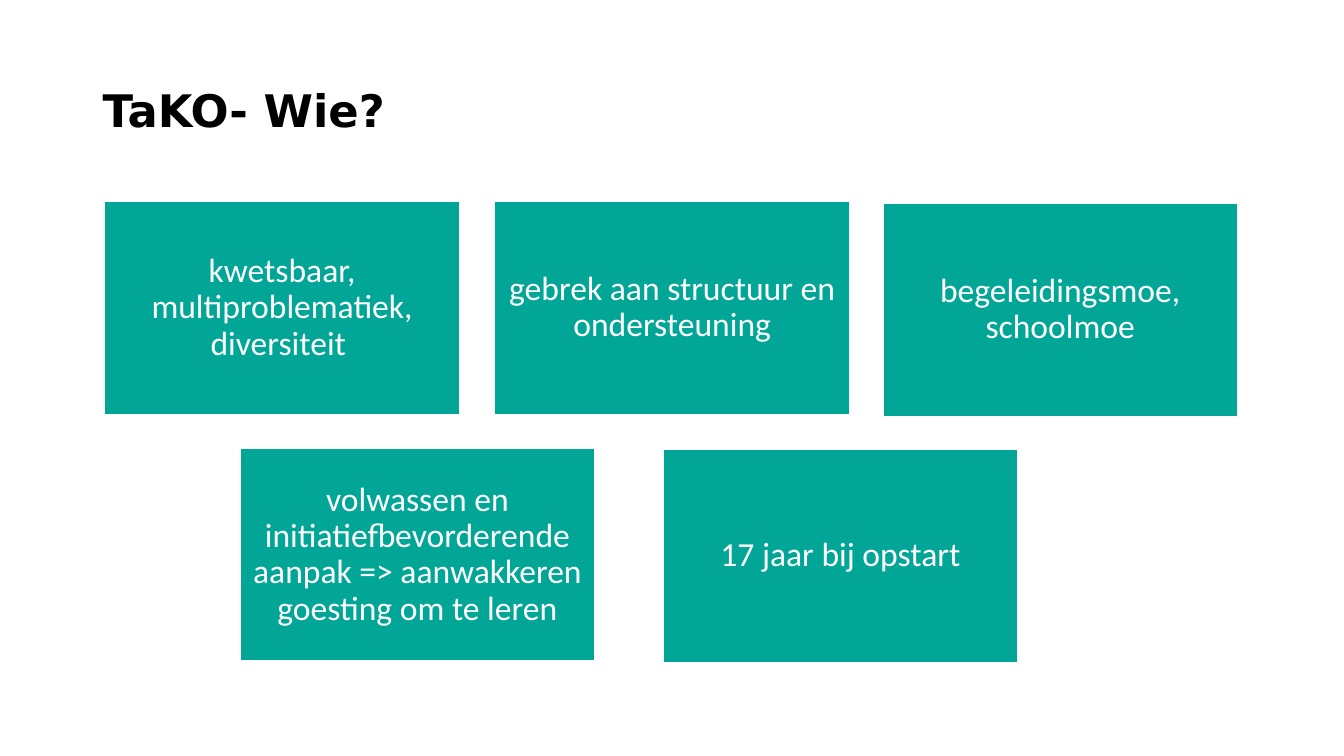
import pptx
import pptx.util
import pptx.dml.color
import pptx.enum.shapes
import pptx.enum.text

Cm = pptx.util.Cm
Pt = pptx.util.Pt
TEAL = pptx.dml.color.RGBColor(0x02, 0xA6, 0x97)
WHITE = pptx.dml.color.RGBColor(0xFF, 0xFF, 0xFF)
BLACK = pptx.dml.color.RGBColor(0x00, 0x00, 0x00)

# Left, top and text of each card, in cm
CARDS = [
    (2.64, 5.08, "kwetsbaar, multiproblematiek, diversiteit "),
    (12.47, 5.08, "gebrek aan structuur en ondersteuning"),
    (22.25, 5.13, "begeleidingsmoe, schoolmoe"),
    (6.05, 11.3, "volwassen en initiatiefbevorderende aanpak => "
                 "aanwakkeren goesting om te leren"),
    (16.71, 11.33, "17 jaar bij opstart"),
]


class Deck:
    """Holds the style and the current slide."""
    head_font, body_font = "DejaVu Sans", "Calibri"
    head_size, body_size = Pt(32), Pt(24)
    wide, high, inset = Cm(8.94), Cm(5.36), Cm(0.25)

    def __init__(self):
        self.file = pptx.Presentation()
        self.file.slide_width = Cm(33.87)
        self.file.slide_height = Cm(19.05)
        self.slide = self.file.slides.add_slide(self.file.slide_layouts[6])

    def label(self, shape, text, font, size, color, align, bold=False):
        frame = shape.text_frame
        frame.word_wrap = True
        frame.vertical_anchor = pptx.enum.text.MSO_ANCHOR.MIDDLE
        para = frame.paragraphs[0]
        para.alignment = align
        para.line_spacing = 0.9
        run = para.add_run()
        run.text = text
        run.font.name = font
        run.font.size = size
        run.font.bold = bold
        run.font.color.rgb = color

    def title(self, text):
        box = self.slide.shapes.add_textbox(
            Cm(2.34), Cm(1.01), Cm(29.21), Cm(3.68))
        self.label(box, text, self.head_font, self.head_size, BLACK,
                   pptx.enum.text.PP_ALIGN.LEFT, bold=True)

    def card(self, left, top, text):
        card = self.slide.shapes.add_shape(
            pptx.enum.shapes.MSO_SHAPE.RECTANGLE,
            Cm(left), Cm(top), self.wide, self.high)
        card.shadow.inherit = False
        card.fill.solid()
        card.fill.fore_color.rgb = TEAL
        card.line.color.rgb = WHITE
        card.line.width = Pt(1)
        frame = card.text_frame
        frame.margin_left = frame.margin_right = self.inset
        frame.margin_top = frame.margin_bottom = self.inset
        self.label(card, text, self.body_font, self.body_size, WHITE,
                   pptx.enum.text.PP_ALIGN.CENTER)


def main():
    deck = Deck()

    # Heading
    deck.title("TaKO- Wie?")

    # Cards
    for left, top, text in CARDS:
        deck.card(left, top, text)

    deck.file.save("out.pptx")


if __name__ == "__main__":
    main()
